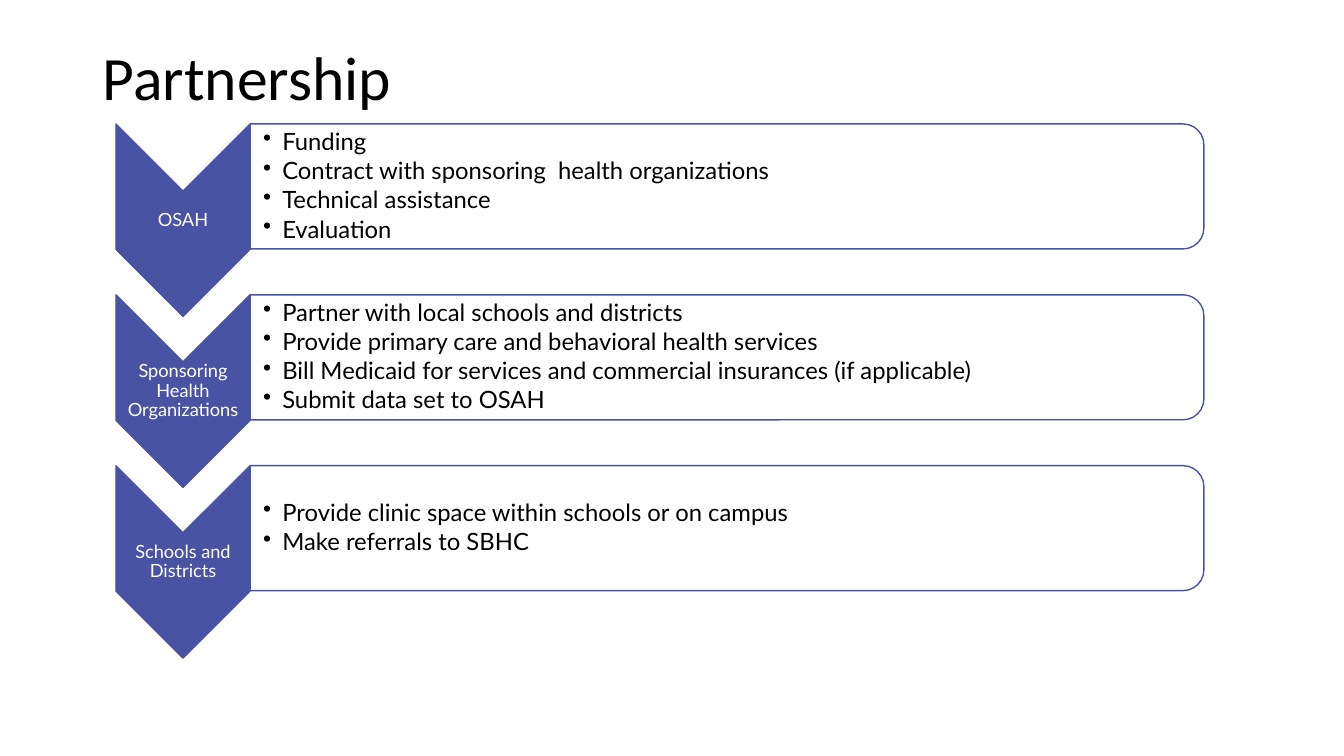
"""Build the Partnership slide: three chevron rows, each with a bulleted panel."""
from lxml.etree import SubElement
from pptx import Presentation
from pptx.dml.color import RGBColor
from pptx.enum.shapes import MSO_SHAPE as Shape
from pptx.enum.text import MSO_ANCHOR as Anchor, PP_ALIGN as Align
from pptx.oxml.ns import qn
from pptx.util import Inches, Pt

TITLE = "Partnership"
PARTNERS = [
    ("OSAH", [
        "Funding",
        "Contract with sponsoring  health organizations",
        "Technical assistance",
        "Evaluation",
    ]),
    ("Sponsoring Health Organizations", [
        "Partner with local schools and districts",
        "Provide primary care and behavioral health services",
        "Bill Medicaid for services and commercial insurances (if applicable)",
        "Submit data set to OSAH",
    ]),
    ("Schools and Districts", [
        "Provide clinic space within schools or on campus",
        "Make referrals to SBHC",
    ]),
]
COLORS = {"accent": "4953A4", "panel": "FFFFFF", "light": "FFFFFF", "dark": "000000"}
FORMATS = {
    "title": {"name": "Calibri", "size": Pt(44), "color": "dark"},
    "label": {"name": "Lato", "size": Pt(13), "color": "light"},
    "bullet": {"name": "Lato", "size": Pt(17), "color": "dark"},
}
PARAGRAPHS = {
    "title": {"line_spacing": 0.9},
    "label": {"line_spacing": 0.9, "alignment": Align.CENTER, "space_after": Pt(4.55)},
    "bullet": {"line_spacing": 0.9, "space_after": Pt(2.55)},
}
MARGINS = {
    "title": (0.1, 0.05, 0.1, 0.05),
    "label": (0.01, 0.01, 0.01, 0.01),
    "bullet": (0.13, 0.01, 0.01, 0.01),
}
WIDTH, HEIGHT = 13.33, 7.5
LEFT, TOP, ROW_STEP = 1.15, 1.23, 1.695
CHEVRON_WIDTH, CHEVRON_HEIGHT = 1.33, 1.91
PANEL_WIDTH, PANEL_HEIGHT = 9.46, 1.24
TEXT_WIDTH, TEXT_INSET = 9.4, 0.06
HANG = 0.19


def rgb(name):
    return RGBColor.from_string(COLORS[name])


def add_turned(page, kind, left, top, width, height, fill, opacity=None):
    """Add a shape turned by 90 degrees that covers the given area."""
    middle_x, middle_y = left + width / 2, top + height / 2
    shape = page.shapes.add_shape(
        kind, Inches(middle_x - height / 2), Inches(middle_y - width / 2),
        Inches(height), Inches(width))
    shape.rotation = 90
    shape.shadow.inherit = False
    shape.fill.solid()
    shape.fill.fore_color.rgb = rgb(fill)
    shape.line.color.rgb = rgb("accent")
    shape.line.width = Pt(1)
    if opacity:
        color = shape.fill._xPr.find(qn("a:solidFill"))[0]
        SubElement(color, qn("a:alpha"), val=str(opacity * 1000))


def add_bullet(para):
    """Give a paragraph a hanging round bullet."""
    props = para._p.get_or_add_pPr()
    props.set("marL", str(Inches(HANG)))
    props.set("indent", str(-Inches(HANG)))
    SubElement(props, qn("a:buChar"), char="•")


def add_text(page, style, lines, left, top, width, height):
    """Add a middle-anchored text box in one of the named styles."""
    box = page.shapes.add_textbox(*map(Inches, (left, top, width, height)))
    frame = box.text_frame
    frame.word_wrap = True
    frame.vertical_anchor = Anchor.MIDDLE
    for side, margin in zip(("left", "top", "right", "bottom"), MARGINS[style]):
        setattr(frame, f"margin_{side}", Inches(margin))
    for index, line in enumerate(lines):
        para = frame.add_paragraph() if index else frame.paragraphs[0]
        if style == "bullet":
            add_bullet(para)
        for key, value in PARAGRAPHS[style].items():
            setattr(para, key, value)
        span = para.add_run()
        span.text = line
        for key, value in FORMATS[style].items():
            if key == "color":
                span.font.color.rgb = rgb(value)
            else:
                setattr(span.font, key, value)


def main():
    deck = Presentation()
    deck.slide_width, deck.slide_height = Inches(WIDTH), Inches(HEIGHT)
    page = deck.slides.add_slide(deck.slide_layouts[6])
    add_text(page, "title", [TITLE], 0.92, 0.36, 11.5, 0.88)
    panel_left = LEFT + CHEVRON_WIDTH
    notch = CHEVRON_WIDTH / 2
    for row, (partner, duties) in enumerate(PARTNERS):
        top = TOP + row * ROW_STEP
        add_turned(page, Shape.CHEVRON, LEFT, top,
                   CHEVRON_WIDTH, CHEVRON_HEIGHT, "accent")
        add_text(page, "label", [partner], LEFT, top + notch,
                 CHEVRON_WIDTH, CHEVRON_HEIGHT - 2 * notch)
        add_turned(page, Shape.ROUND_2_SAME_RECTANGLE, panel_left, top,
                   PANEL_WIDTH, PANEL_HEIGHT, "panel", 90)
        add_text(page, "bullet", duties, panel_left, top + TEXT_INSET,
                 TEXT_WIDTH, PANEL_HEIGHT - 2 * TEXT_INSET)
    deck.save("out.pptx")


if __name__ == "__main__":
    main()
